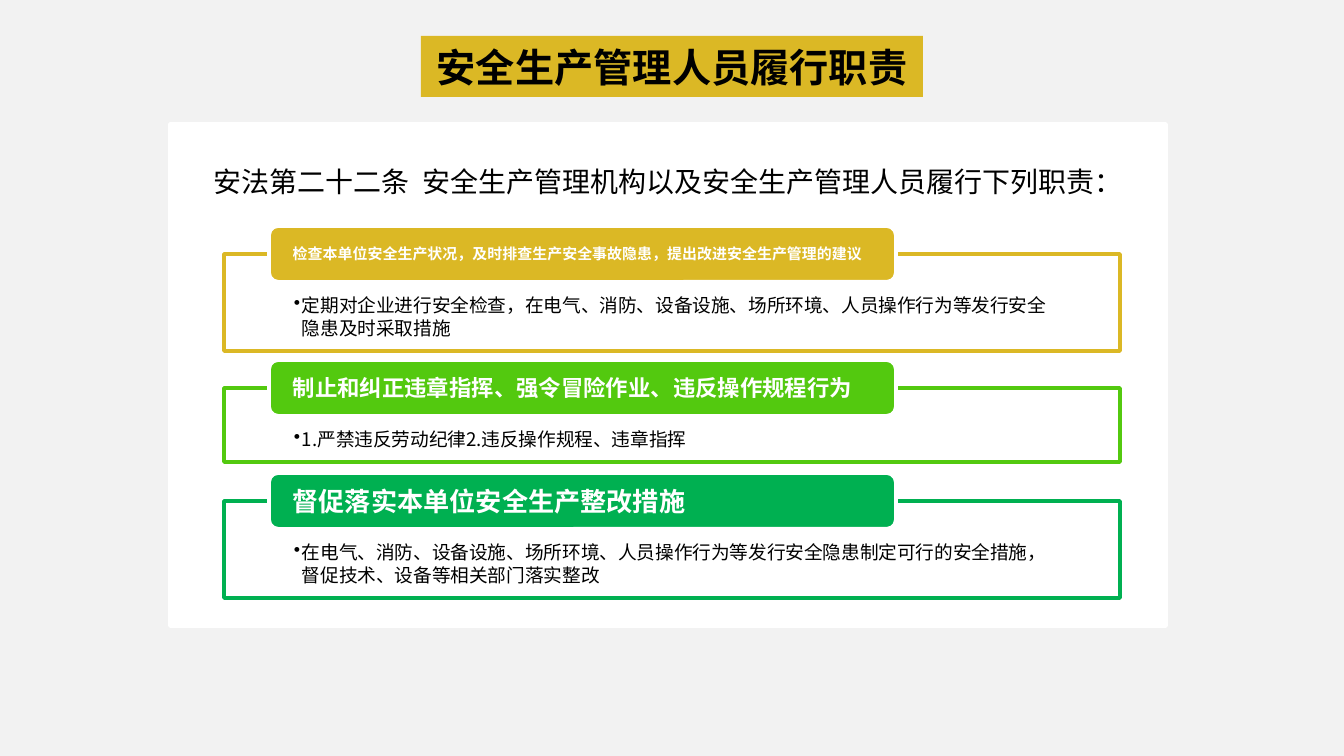
"""Build the slide on the duties of work safety managers."""
from dataclasses import dataclass

from lxml.etree import SubElement
from pptx import Presentation
from pptx.dml.color import RGBColor
from pptx.enum.shapes import MSO_SHAPE
from pptx.enum.text import MSO_ANCHOR, PP_ALIGN
from pptx.oxml.ns import qn
from pptx.util import Pt

SCALE = 914400 / 134.4
GOLD, GREEN, EMERALD = "DBB825", "53C90F", "00B051"
WHITE, BLACK, GREY = "FFFFFF", "000000", "F2F2F2"
CABIN, NOTO = "Cabin", "Noto Sans CJK SC"


@dataclass
class Duty:
    top: int
    height: int
    color: str
    heading: str
    size: int
    detail: str
    font: str


DUTIES = [
    Duty(254, 97, GOLD, "检查本单位安全生产状况，及时排查生产安全事故隐患，提出改进安全生产管理的建议", 8,
         "定期对企业进行安全检查，在电气、消防、设备设施、场所环境、人员操作行为等发行安全隐患及时采取措施", NOTO),
    Duty(388, 74, GREEN, "制止和纠正违章指挥、强令冒险作业、违反操作规程行为", 12,
         "1.严禁违反劳动纪律2.违反操作规程、违章指挥", NOTO),
    Duty(501, 97, EMERALD, "督促落实本单位安全生产整改措施", 14,
         "在电气、消防、设备设施、场所环境、人员操作行为等发行安全隐患制定可行的安全措施，"
         "督促技术、设备等相关部门落实整改", CABIN),
]


def px(n: float) -> int:
    return round(n * SCALE)


def rgb(color: str) -> RGBColor:
    return RGBColor.from_string(color)


def add_box(slide, kind, box: tuple, fill: str, line: str = "", alpha: int = 100):
    sp = slide.shapes.add_shape(kind, *map(px, box))
    sp.shadow.inherit = False
    sp.fill.solid()
    sp.fill.fore_color.rgb = rgb(fill)
    if alpha < 100:
        clr = sp.fill._xPr.find(qn("a:solidFill"))[0]
        SubElement(clr, qn("a:alpha"), val=str(alpha * 1000))
    if line:
        sp.line.color.rgb = rgb(line)
        sp.line.width = Pt(2)
    else:
        sp.line.fill.background()
    return sp


def write(sp, text: str, *, size: int, font: str = CABIN, color: str = BLACK,
          bold: bool = False, align=PP_ALIGN.LEFT, anchor=MSO_ANCHOR.TOP,
          insets: tuple = (13, 7, 13, 7), wrap: bool = True,
          spacing: float = 1.0, bullet: bool = False) -> None:
    tf = sp.text_frame
    tf.word_wrap = wrap
    tf.vertical_anchor = anchor
    tf.margin_left, tf.margin_top, tf.margin_right, tf.margin_bottom = map(px, insets)
    p = tf.paragraphs[0]
    p.alignment = align
    p.line_spacing = spacing
    if bullet:
        p.level = 1
        pPr = p._p.get_or_add_pPr()
        pPr.set("marL", str(px(8)))
        pPr.set("indent", str(px(-8)))
        SubElement(pPr, qn("a:buChar"), char="•")
    r = p.add_run()
    r.text = text
    r.font.size = Pt(size)
    r.font.bold = bold
    r.font.name = font
    r.font.color.rgb = rgb(color)
    SubElement(r._r.get_or_add_rPr(), qn("a:ea"), typeface=CABIN)


def add_duty(slide, duty: Duty) -> None:
    frame = add_box(slide, MSO_SHAPE.RECTANGLE, (224, duty.top, 896, duty.height),
                    WHITE, duty.color, alpha=90)
    write(frame, duty.detail, size=10, font=duty.font, insets=(70, 40, 70, 11), bullet=True)
    bar = add_box(slide, MSO_SHAPE.ROUNDED_RECTANGLE, (269, duty.top - 28, 627, 56),
                  duty.color, WHITE)
    write(bar, duty.heading, size=duty.size, color=WHITE, bold=True,
          anchor=MSO_ANCHOR.MIDDLE, insets=(21, 0, 21, 0))


def main() -> None:
    prs = Presentation()
    prs.slide_width, prs.slide_height = px(1344), px(756)
    slide = prs.slides.add_slide(prs.slide_layouts[6])
    slide.background.fill.solid()
    slide.background.fill.fore_color.rgb = rgb(GREY)

    add_box(slide, MSO_SHAPE.RECTANGLE, (170, 124, 996, 502), WHITE, WHITE)
    title = add_box(slide, MSO_SHAPE.RECTANGLE, (421, 36, 502, 61), GOLD)
    write(title, "安全生产管理人员履行职责", size=21, font=NOTO, bold=True,
          align=PP_ALIGN.CENTER, wrap=False)
    intro = slide.shapes.add_textbox(*map(px, (170, 141, 996, 65)))
    write(intro, "安法第二十二条  安全生产管理机构以及安全生产管理人员履行下列职责：", size=15,
          align=PP_ALIGN.CENTER, spacing=1.5)
    for duty in DUTIES:
        add_duty(slide, duty)
    prs.save("out.pptx")


if __name__ == "__main__":
    main()
